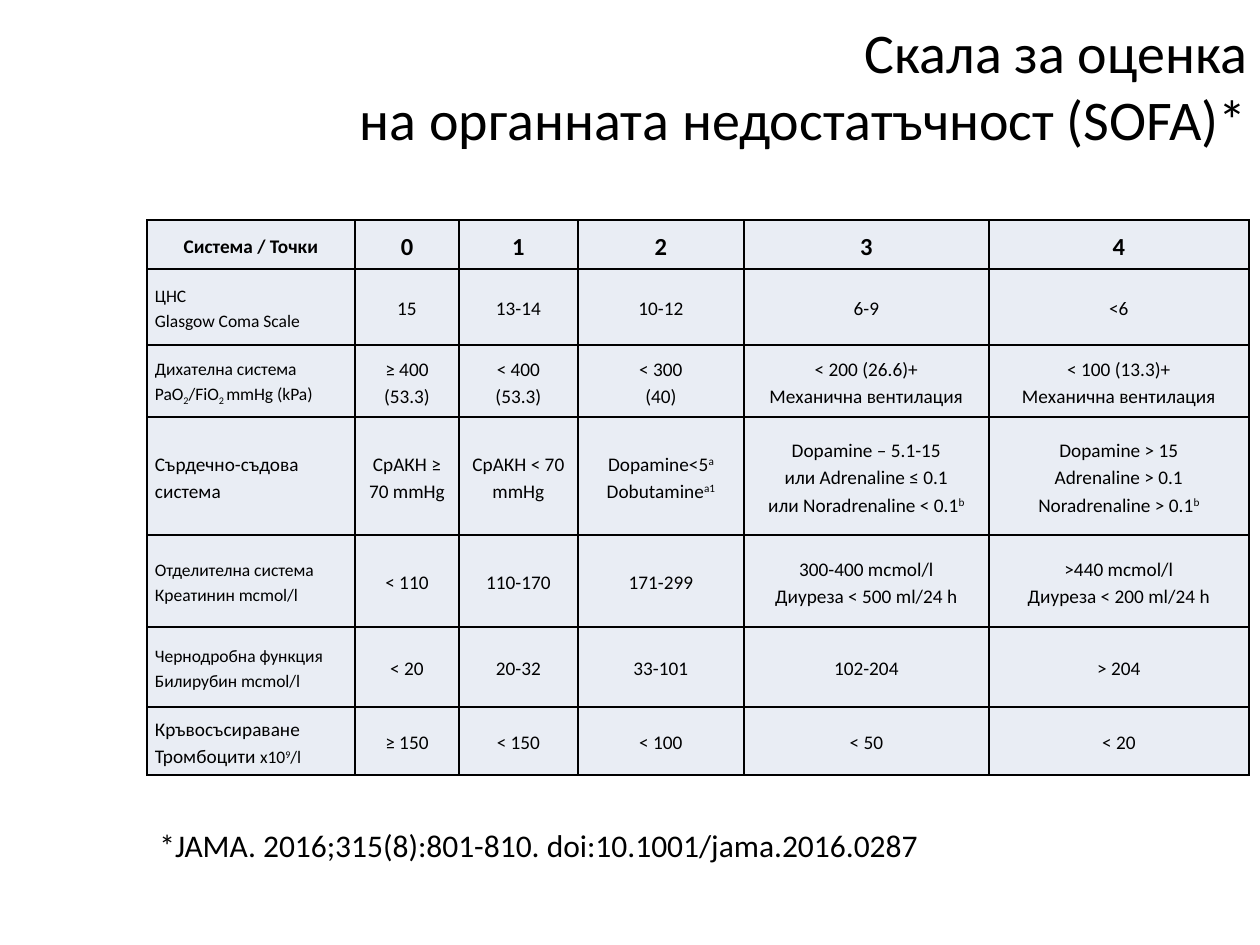
from dataclasses import dataclass

from lxml.etree import SubElement
from pptx import Presentation
from pptx.dml.color import RGBColor as Rgb
from pptx.enum.text import MSO_ANCHOR as Anchor, PP_ALIGN as Align
from pptx.oxml.ns import qn
from pptx.util import Emu, Pt

SCALE = 914400 / 126
SUB, SUP = -25, 30


@dataclass(frozen=True)
class Theme:
    font: str = "Calibri"
    ink: str = "000000"
    fill: str = "E9EDF4"
    title: int = 32
    note: int = 18
    score: int = 14
    body: int = 11
    small: int = 10
    border: int = 1
    spacing: float = 1.15


@dataclass(frozen=True)
class Run:
    text: str
    size: int = 0
    base: int = 0


@dataclass(frozen=True)
class Box:
    left: int
    top: int
    width: int
    height: int


Line = tuple[Run, ...]


@dataclass(frozen=True)
class Row:
    height: int
    size: int
    label: list[Line]
    scores: list[list[Line]]


THEME = Theme()


def px(n: int) -> Emu:
    return Emu(round(n * SCALE))


def lines(text: str) -> list[Line]:
    """One plain run for each line of the text."""
    return [(Run(part),) for part in text.split("\n")]


def plain(*texts: str) -> list[list[Line]]:
    return [lines(text) for text in texts]


COLS = (208, 104, 119, 166, 245, 260)
HEAD = Row(49, THEME.body, lines("Система / Точки"), plain("0", "1", "2", "3", "4"))
ROWS = [
    Row(76, THEME.small, lines("ЦНС\nGlasgow Coma Scale"),
        plain("15", "13-14", "10-12", "6-9", "<6")),
    Row(72, THEME.small,
        [(Run("Дихателна система"),),
         (Run("PaO"), Run("2", base=SUB), Run("/FiO"),
          Run("2 ", base=SUB), Run("mmHg (kPa)"))],
        plain("≥ 400\n(53.3)", "< 400\n(53.3)", "< 300\n(40)",
              "< 200 (26.6)+\nМеханична вентилация",
              "< 100 (13.3)+\nМеханична вентилация")),
    Row(118, THEME.body, lines("Сърдечно-съдова система"),
        plain("СрАКН ≥ 70 mmHg", "СрАКН < 70 mmHg") + [
            [(Run("Dopamine<5"), Run("а", base=SUP)),
             (Run("Dobutamine"), Run("а1", base=SUP))],
            lines("Dopamine – 5.1-15\nили Adrenaline ≤ 0.1")
            + [(Run("или Noradrenaline < 0.1"), Run("b", base=SUP))],
            lines("Dopamine > 15\nAdrenaline > 0.1")
            + [(Run("Noradrenaline > 0.1"), Run("b", base=SUP))]]),
    Row(92, THEME.small, lines("Отделителна система\nКреатинин mcmol/l"),
        plain("< 110", "110-170", "171-299",
              "300-400 mcmol/l\nДиуреза < 500 ml/24 h",
              ">440 mcmol/l\nДиуреза < 200 ml/24 h")),
    Row(80, THEME.small, lines("Чернодробна функция\nБилирубин mcmol/l"),
        plain("< 20", "20-32", "33-101", "102-204", "> 204")),
    Row(68, THEME.body,
        [(Run("Кръвосъсираване"),),
         (Run("Тромбоцити "), Run("x10", THEME.small),
          Run("9", THEME.small, SUP), Run("/l", THEME.small))],
        plain("≥ 150", "< 150", "< 100", "< 50", "< 20")),
]


def write(frame, text: list[Line], size: int, align: Align,
          bold: bool = False, spacing: float = 1.0) -> None:
    for i, line in enumerate(text):
        para = frame.add_paragraph() if i else frame.paragraphs[0]
        para.alignment = align
        para.line_spacing = spacing
        for part in line:
            run = para.add_run()
            run.text = part.text
            font = run.font
            font.name, font.bold = THEME.font, bold
            font.size = Pt(part.size or size)
            font.color.rgb = Rgb.from_string(THEME.ink)
            if part.base:
                run._r.get_or_add_rPr().set("baseline", str(part.base * 1000))


def add_text(slide, box: Box, text: str, size: int, align: Align,
             anchor: Anchor) -> None:
    shape = slide.shapes.add_textbox(
        px(box.left), px(box.top), px(box.width), px(box.height))
    frame = shape.text_frame
    frame.word_wrap = True
    frame.vertical_anchor = anchor
    write(frame, lines(text), size, align)


def style(cell) -> None:
    """Set the insets, borders and fill of a cell."""
    cell.vertical_anchor = Anchor.MIDDLE
    cell.margin_left = cell.margin_right = px(8)
    cell.margin_top, cell.margin_bottom = px(1), px(0)
    props = cell._tc.get_or_add_tcPr()
    for side in ("lnL", "lnR", "lnT", "lnB"):
        edge = SubElement(props, qn(f"a:{side}"), w=str(Pt(THEME.border)))
        paint = SubElement(edge, qn("a:solidFill"))
        SubElement(paint, qn("a:srgbClr"), val=THEME.ink)
    cell.fill.solid()
    cell.fill.fore_color.rgb = Rgb.from_string(THEME.fill)


def add_grid(slide, left: int, top: int, rows: list[Row]) -> None:
    high = sum(row.height for row in rows)
    table = slide.shapes.add_table(
        len(rows), len(COLS), px(left), px(top), px(sum(COLS)), px(high)).table
    table.first_row = table.horz_banding = False
    for col, width in zip(table.columns, COLS):
        col.width = px(width)
    for r, row in enumerate(rows):
        table.rows[r].height = px(row.height)
        head = row is HEAD
        for c, text in enumerate([row.label, *row.scores]):
            cell = table.cell(r, c)
            style(cell)
            size = THEME.score if head else THEME.body
            align = Align.CENTER if head or c else Align.LEFT
            write(cell.text_frame, text, size if c else row.size, align,
                  head, THEME.spacing)


def main() -> None:
    deck = Presentation()
    deck.slide_width, deck.slide_height = px(1260), px(945)
    slide = deck.slides.add_slide(deck.slide_layouts[6])
    add_text(slide, Box(126, 22, 1134, 126),
             "Скала за оценка\nна органната недостатъчност (SOFA)*",
             THEME.title, Align.RIGHT, Anchor.MIDDLE)
    add_grid(slide, 147, 220, [HEAD, *ROWS])
    add_text(slide, Box(147, 820, 819, 50),
             "*JAMA. 2016;315(8):801-810. doi:10.1001/jama.2016.0287",
             THEME.note, Align.LEFT, Anchor.TOP)
    deck.save("out.pptx")


if __name__ == "__main__":
    main()
